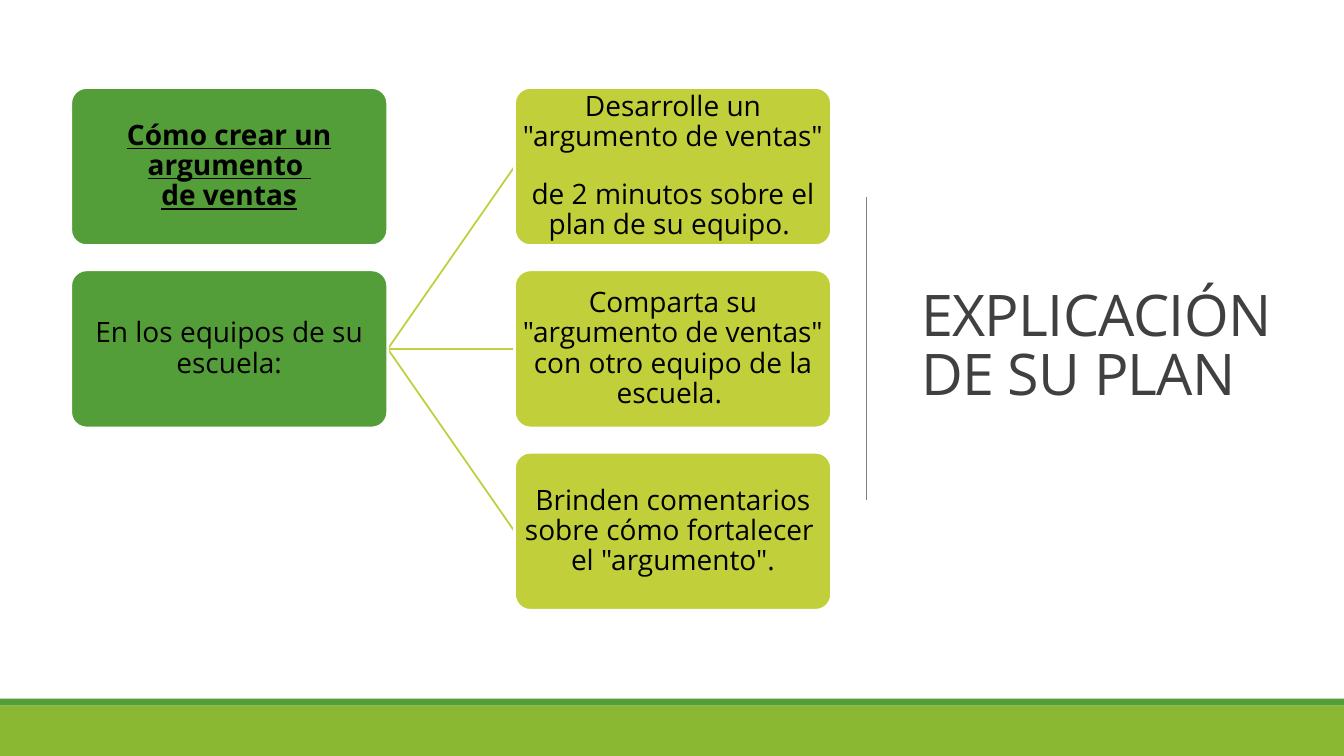
from dataclasses import dataclass

from lxml import etree
from pptx import Presentation
from pptx.dml.color import RGBColor
from pptx.enum.shapes import MSO_CONNECTOR, MSO_SHAPE
from pptx.enum.text import MSO_ANCHOR, PP_ALIGN
from pptx.oxml.ns import qn
from pptx.util import Pt

RECTANGLE = MSO_SHAPE.RECTANGLE
ROUNDED = MSO_SHAPE.ROUNDED_RECTANGLE
STRAIGHT = MSO_CONNECTOR.STRAIGHT
MIDDLE = MSO_ANCHOR.MIDDLE
CENTER = PP_ALIGN.CENTER

FONT = "Open Sans"
GREEN, LIME, LEAF = "549E39", "C0CF3A", "8AB833"
WHITE, BLACK, DARK_GREY, GREY = "FFFFFF", "000000", "404040", "808080"

SLIDE_WIDTH, SLIDE_HEIGHT = 960, 540
CARD_WIDTH, CARD_HEIGHT = 226.5, 113
COLUMN_LEFTS = (50.5, 367.5)
TOP_ROW, ROW_STEP = 62.5, 130.25


@dataclass(frozen=True)
class Card:
    text: str
    column: int
    row: int
    fill: str
    heading: bool = False

    @property
    def left(self) -> float:
        return COLUMN_LEFTS[self.column]

    @property
    def top(self) -> float:
        return TOP_ROW + self.row * ROW_STEP

    @property
    def middle(self) -> float:
        return self.top + CARD_HEIGHT / 2


@dataclass(frozen=True)
class Band:
    top: float
    height: float
    fill: str


HEADING = Card("Cómo crear un argumento \vde ventas", 0, 0, GREEN, heading=True)
TEAMS = Card("En los equipos de su escuela:", 0, 1, GREEN)
STEPS = [
    Card(text, 1, row, LIME)
    for row, text in enumerate((
        'Desarrolle un "argumento de ventas" \vde 2 minutos sobre el plan de su equipo. ',
        'Comparta su "argumento de ventas" con otro equipo de la escuela. ',
        'Brinden comentarios sobre cómo fortalecer \vel "argumento".',
    ))
]
FOOTER = (Band(499, 5, GREEN), Band(504, 36, LEAF))


def rgb(value: str) -> RGBColor:
    return RGBColor.from_string(value)


def style_text(frame, size: float, color: str, spacing: float, inset: float) -> None:
    frame.word_wrap = True
    frame.vertical_anchor = MIDDLE
    frame.margin_left = frame.margin_right = Pt(inset)
    frame.margin_top = frame.margin_bottom = Pt(inset)
    for paragraph in frame.paragraphs:
        paragraph.line_spacing = spacing
        for run in paragraph.runs:
            run.font.name = FONT
            run.font.size = Pt(size)
            run.font.color.rgb = rgb(color)


def add_filled(slide, kind, left: float, top: float, width: float, height: float, fill: str):
    shape = slide.shapes.add_shape(kind, Pt(left), Pt(top), Pt(width), Pt(height))
    shape.shadow.inherit = False
    shape.fill.solid()
    shape.fill.fore_color.rgb = rgb(fill)
    shape.line.fill.background()
    return shape


def add_line(slide, start: tuple[float, float], end: tuple[float, float],
             color: str, width: float) -> None:
    line = slide.shapes.add_connector(STRAIGHT, *map(Pt, start + end))
    line.line.color.rgb = rgb(color)
    line.line.width = Pt(width)
    properties = line._element.find(qn("p:spPr"))
    etree.SubElement(properties, qn("a:effectLst"))


def add_card(slide, card: Card) -> None:
    shape = add_filled(slide, ROUNDED, card.left, card.top, CARD_WIDTH, CARD_HEIGHT, card.fill)
    shape.adjustments[0] = 0.1
    shape.line.color.rgb = rgb(WHITE)
    shape.line.width = Pt(2)
    frame = shape.text_frame
    frame.text = card.text
    style_text(frame, 20, BLACK, 0.9, 0.7)
    for paragraph in frame.paragraphs:
        paragraph.alignment = CENTER
        for run in paragraph.runs:
            run.font.bold = card.heading
            run.font.underline = card.heading


def add_title(slide, text: str) -> None:
    title = slide.shapes.add_textbox(Pt(643.7), Pt(49.7), Pt(301), Pt(398))
    title.text_frame.text = text
    style_text(title.text_frame, 41, DARK_GREY, 0.85, 14.4)
    for run in title.text_frame.paragraphs[0].runs:
        run.font._element.set("spc", "-50")


def main() -> None:
    presentation = Presentation()
    presentation.slide_width = Pt(SLIDE_WIDTH)
    presentation.slide_height = Pt(SLIDE_HEIGHT)
    slide = presentation.slides.add_slide(presentation.slide_layouts[6])
    slide.background.fill.solid()
    slide.background.fill.fore_color.rgb = rgb(WHITE)

    add_title(slide, "EXPLICACIÓN DE SU PLAN")
    add_line(slide, (618.8, 141), (618.8, 357), GREY, 0.5)
    for band in FOOTER:
        add_filled(slide, RECTANGLE, 0, band.top, SLIDE_WIDTH, band.height, band.fill)

    branch_start = (TEAMS.left + CARD_WIDTH, TEAMS.middle)
    for step in STEPS:
        add_line(slide, branch_start, (step.left, step.middle), LIME, 1.25)
    for card in (HEADING, TEAMS, *STEPS):
        add_card(slide, card)

    presentation.save("out.pptx")


if __name__ == "__main__":
    main()
